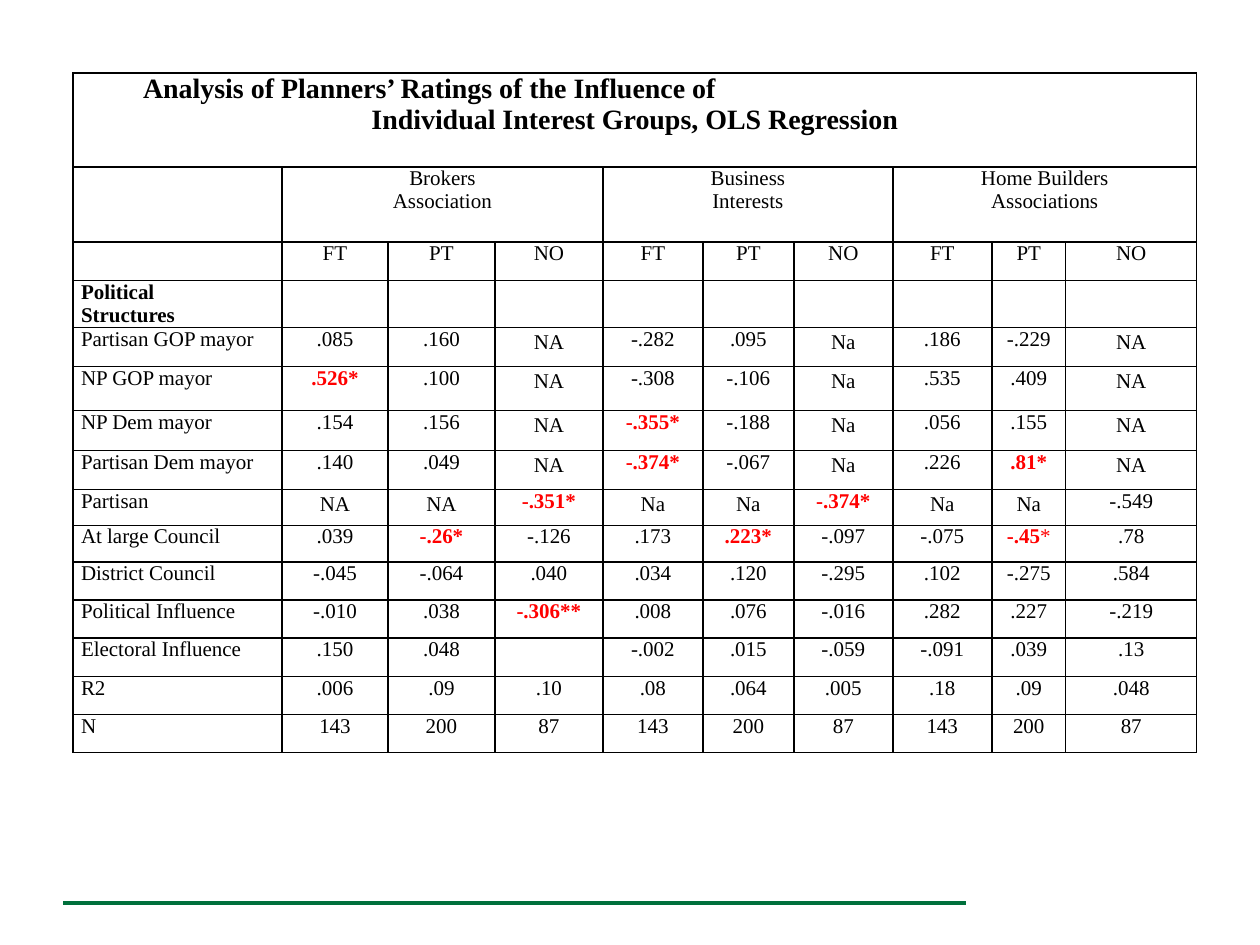
from lxml import etree
from pptx import Presentation
from pptx.dml.color import RGBColor
from pptx.enum.shapes import MSO_CONNECTOR
from pptx.enum.text import PP_ALIGN
from pptx.oxml.ns import qn
from pptx.util import Emu, Pt

LEFT, MID = PP_ALIGN.LEFT, PP_ALIGN.CENTER
LINE = MSO_CONNECTOR.STRAIGHT
SCALE = 914400 / 126
FONT = "Times New Roman"
HUES = {"ink": "000000", "red": "FF0000", "green": "00703C"}

COLS = [209, 106, 107, 108, 100, 91, 99, 99, 74, 131]
ROWS = [94, 75, 38, 47, 39, 44, 40, 39, 36, 37, 38, 38, 38, 38, 38]
TITLE = ("Analysis of Planners’ Ratings of the Influence of\n"
         "Individual Interest Groups, OLS Regression")
GROUPS = ["Brokers\nAssociation", "Business\nInterests",
          "Home Builders\nAssociations"]
HEAD = "Political\nStructures"
BODY = [
    ("", "FT PT NO FT PT NO FT PT NO"),
    (HEAD, ""),
    ("Partisan GOP mayor", ".085 .160 NA -.282 .095 Na .186 -.229 NA"),
    ("NP GOP mayor", ".526* .100 NA -.308 -.106 Na .535 .409 NA"),
    ("NP Dem mayor", ".154 .156 NA -.355* -.188 Na .056 .155 NA"),
    ("Partisan Dem mayor", ".140 .049 NA -.374* -.067 Na .226 .81* NA"),
    ("Partisan", "NA NA -.351* Na Na -.374* Na Na -.549"),
    ("At large Council", ".039 -.26* -.126 .173 .223* -.097 -.075 -.45|* .78"),
    ("District Council", "-.045 -.064 .040 .034 .120 -.295 .102 -.275 .584"),
    ("Political Influence",
     "-.010 .038 -.306** .008 .076 -.016 .282 .227 -.219"),
    ("Electoral Influence", ".150 .048 _ -.002 .015 -.059 -.091 .039 .13"),
    ("R2", ".006 .09 .10 .08 .064 .005 .18 .09 .048"),
    ("N", "143 200 87 143 200 87 143 200 87"),
]


def px(num):
    return Emu(round(num * SCALE))


class Deck:
    """Holds the style and the current slide, and draws each kind of element."""

    def __init__(self, wide, high):
        self.prs = Presentation()
        self.prs.slide_width, self.prs.slide_height = px(wide), px(high)
        self.slide = self.prs.slides.add_slide(self.prs.slide_layouts[6])

    def rule(self, x, y, end, hue, width):
        line = self.slide.shapes.add_connector(
            LINE, px(x), px(y), px(end), px(y))
        line.line.color.rgb = RGBColor.from_string(HUES[hue])
        line.line.width = Pt(width)
        etree.SubElement(line._element.spPr, qn("a:effectLst"))

    def table(self, x, y, cols, rows):
        frame = self.slide.shapes.add_table(
            len(rows), len(cols), px(x), px(y), px(sum(cols)), px(sum(rows)))
        grid = frame.table
        grid.first_row = grid.horz_banding = False
        for col, wide in zip(grid.columns, cols):
            col.width = px(wide)
        for row, high in zip(grid.rows, rows):
            row.height = px(high)
        for cell in grid.iter_cells():
            cell.margin_left = cell.margin_right = px(8)
            cell.margin_top = cell.margin_bottom = 0
            self.edge(cell)
            cell.fill.background()
        return grid

    def edge(self, cell):
        props = cell._tc.get_or_add_tcPr()
        for side in ("lnL", "lnR", "lnT", "lnB"):
            line = etree.SubElement(props, qn("a:" + side), w=str(Pt(1)))
            fill = etree.SubElement(line, qn("a:solidFill"))
            etree.SubElement(fill, qn("a:srgbClr"), val=HUES["ink"])

    def label(self, cell, text, align=MID, size=12, bold=False):
        main, _, tail = text.partition("|")
        star = text.endswith("*")
        cell.text_frame.text = main
        for para in cell.text_frame.paragraphs:
            para.alignment = align
            if text.upper() == "NA":
                para.line_spacing, para.space_after = 1.15, Pt(10)
            for run in para.runs:
                self.style(run, size, bold or star, star)
            if tail:
                run = para.add_run()
                run.text = tail
                self.style(run, size, False, star)

    def style(self, run, size, bold, star):
        font = run.font
        font.name, font.size, font.bold = FONT, Pt(size), bold
        font.color.rgb = RGBColor.from_string(HUES["red" if star else "ink"])


def main():
    deck = Deck(1260, 945)
    deck.rule(63, 903, 966, "green", 2.5)
    grid = deck.table(73, 73, COLS, ROWS)

    title = grid.cell(0, 0)
    title.merge(grid.cell(0, 9))
    deck.label(title, TITLE, size=16, bold=True)
    first = title.text_frame.paragraphs[0]
    first.alignment = LEFT
    first._p.get_or_add_pPr().set("marL", str(px(62)))

    for num, name in enumerate(GROUPS):
        col = 1 + 3 * num
        grid.cell(1, col).merge(grid.cell(1, col + 2))
        deck.label(grid.cell(1, col), name)

    for row, (name, vals) in enumerate(BODY, 2):
        deck.label(grid.cell(row, 0), name, LEFT, bold=name == HEAD)
        for col, val in enumerate(vals.split(), 1):
            if val != "_":
                deck.label(grid.cell(row, col), val)

    deck.prs.save("out.pptx")


if __name__ == "__main__":
    main()
